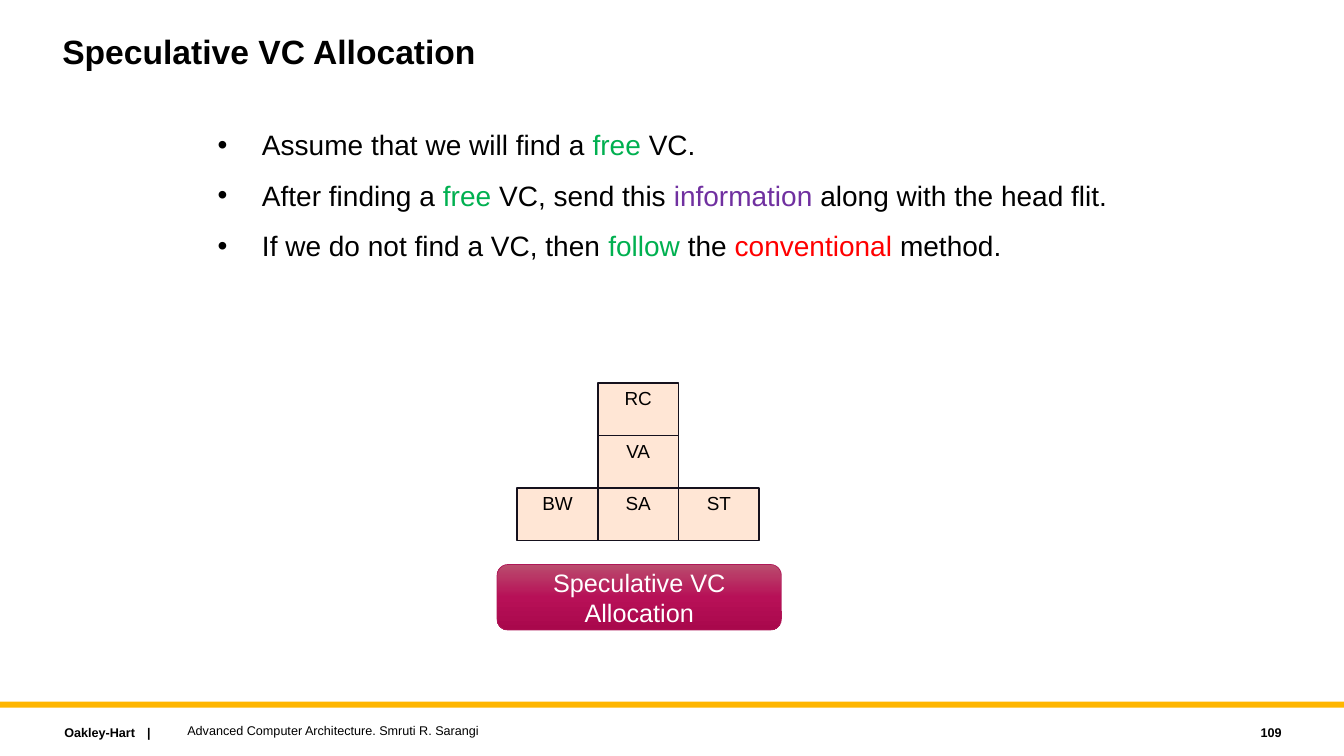
from copy import deepcopy

from lxml.etree import SubElement as Sub
from pptx import Presentation
from pptx.dml.color import RGBColor as RGB
from pptx.enum.shapes import MSO_SHAPE as Form
from pptx.enum.text import MSO_ANCHOR as Anchor, PP_ALIGN as Align
from pptx.oxml.ns import qn
from pptx.util import Inches, Pt

BLACK = RGB(0x00, 0x00, 0x00)
WHITE = RGB(0xFF, 0xFF, 0xFF)
GOLD = RGB(0xFF, 0xB6, 0x00)
GREEN = RGB(0x00, 0xB0, 0x50)
PURPLE = RGB(0x70, 0x30, 0xA0)
RED = RGB(0xFF, 0x00, 0x00)
PEACH = RGB(0xFF, 0xE6, 0xD5)
INK = RGB(0x15, 0x11, 0x1D)
ROSE = RGB(0xBA, 0x4D, 0x6E)
WINE = RGB(0xB7, 0x10, 0x57)
PLUM = RGB(0xA9, 0x08, 0x4C)
EDGE = RGB(0xAF, 0x18, 0x58)

POINTS = [
    [("Assume that we will find a ", BLACK), ("free", GREEN), (" VC.", BLACK)],
    [("After finding a ", BLACK), ("free", GREEN), (" VC, send this ", BLACK),
     ("information", PURPLE), (" along with the head flit.", BLACK)],
    [("If we do not find a VC, then ", BLACK), ("follow", GREEN),
     (" the ", BLACK), ("conventional", RED), (" method.", BLACK)],
]
STAGES = [("RC", 1, 0), ("VA", 1, 1), ("BW", 0, 2), ("SA", 1, 2), ("ST", 2, 2)]


class Deck:
    """Holds the style and the current slide, and draws its elements."""

    def __init__(self):
        self.font = "Arial"
        self.show = Presentation()
        self.show.slide_width = Inches(13.33)
        self.show.slide_height = Inches(7.5)
        self.slide = self.show.slides.add_slide(self.show.slide_layouts[6])

    def run(self, para, text, size, color=BLACK, bold=False):
        run = para.add_run()
        run.text = text
        font = run.font
        font.name, font.size, font.bold = self.font, Pt(size), bold
        font.color.rgb = color

    def frame(self, left, top, width, height, anchor=Anchor.TOP):
        box = self.slide.shapes.add_textbox(
            Inches(left), Inches(top), Inches(width), Inches(height))
        frame = box.text_frame
        frame.word_wrap = True
        frame.vertical_anchor = anchor
        return frame

    def label(self, place, text, size, bold=False, align=Align.LEFT,
              anchor=Anchor.TOP, space=None, tab=None):
        para = self.frame(*place, anchor).paragraphs[0]
        para.alignment = align
        if space:
            para.line_spacing = space
        if tab:
            tabs = Sub(para._p.get_or_add_pPr(), qn("a:tabLst"))
            Sub(tabs, qn("a:tab"), pos=str(Inches(tab)), algn="l")
        self.run(para, text, size, bold=bold)

    def bullets(self, place, points, size, indent):
        frame = self.frame(*place)
        for row, point in enumerate(points):
            para = frame.add_paragraph() if row else frame.paragraphs[0]
            if row:
                para.space_before = Pt(12)
            props = para._p.get_or_add_pPr()
            props.set("marL", str(Inches(indent)))
            props.set("indent", str(-Inches(indent)))
            Sub(props, qn("a:buFont"), typeface=self.font)
            Sub(props, qn("a:buChar"), char="•")
            for text, color in point:
                self.run(para, text, size, color)

    def shape(self, form, left, top, width, height, fill, line=None, weight=1):
        shape = self.slide.shapes.add_shape(
            form, Inches(left), Inches(top), Inches(width), Inches(height))
        shape.shadow.inherit = False
        shape.fill.solid()
        shape.fill.fore_color.rgb = fill
        if line is None:
            shape.line.fill.background()
        else:
            shape.line.color.rgb = line
            shape.line.width = Pt(weight)
        return shape

    def cell(self, text, left, top, width, height):
        shape = self.shape(Form.RECTANGLE, left, top, width, height, PEACH, INK)
        frame = shape.text_frame
        frame.margin_left = frame.margin_right = Inches(0.07)
        frame.margin_top = frame.margin_bottom = Inches(0.04)
        frame.vertical_anchor = Anchor.TOP
        para = frame.paragraphs[0]
        para.alignment = Align.CENTER
        self.run(para, text, 13.5)

    def button(self, place, text, colors):
        shape = self.shape(Form.ROUNDED_RECTANGLE, *place, WINE, EDGE, 0.5)
        fill = shape.fill
        fill.gradient()
        fill.gradient_angle = 270
        stops = shape._element.spPr.find(".//" + qn("a:gsLst"))
        stops.append(deepcopy(stops[0]))
        for step, (stop, color) in enumerate(zip(fill.gradient_stops, colors)):
            stop.position = step / (len(colors) - 1)
            stop.color.rgb = color
        frame = shape.text_frame
        frame.vertical_anchor = Anchor.MIDDLE
        para = frame.paragraphs[0]
        para.alignment = Align.CENTER
        self.run(para, text, 18, WHITE)


def main():
    deck = Deck()
    deck.shape(Form.RECTANGLE, 0, 6.96, 13.33, 0.06, GOLD)
    deck.label((0.54, 7.14, 2.27, 0.25), "Oakley-Hart\t|", 9, bold=True, tab=0.82)
    deck.label((0.52, 0.3, 10, 0.9), "Speculative VC Allocation", 24,
               bold=True, space=0.9)
    deck.bullets((2.06, 1.22, 9.41, 2.05), POINTS, 20, 0.44)
    deck.label((11.41, 7.14, 1.4, 0.25), "109", 9, bold=True,
               align=Align.RIGHT, anchor=Anchor.MIDDLE)
    for name, col, row in STAGES:
        deck.cell(name, 5.13 + 0.8 * col, 3.8 + 0.52 * row, 0.8, 0.52)
    deck.button((4.93, 5.6, 2.82, 0.65), "Speculative VC Allocation",
                (ROSE, WINE, PLUM))
    deck.label((1.76, 7.12, 8, 0.25),
               "Advanced Computer Architecture. Smruti R. Sarangi", 9,
               anchor=Anchor.MIDDLE)
    deck.show.save("out.pptx")


if __name__ == "__main__":
    main()
